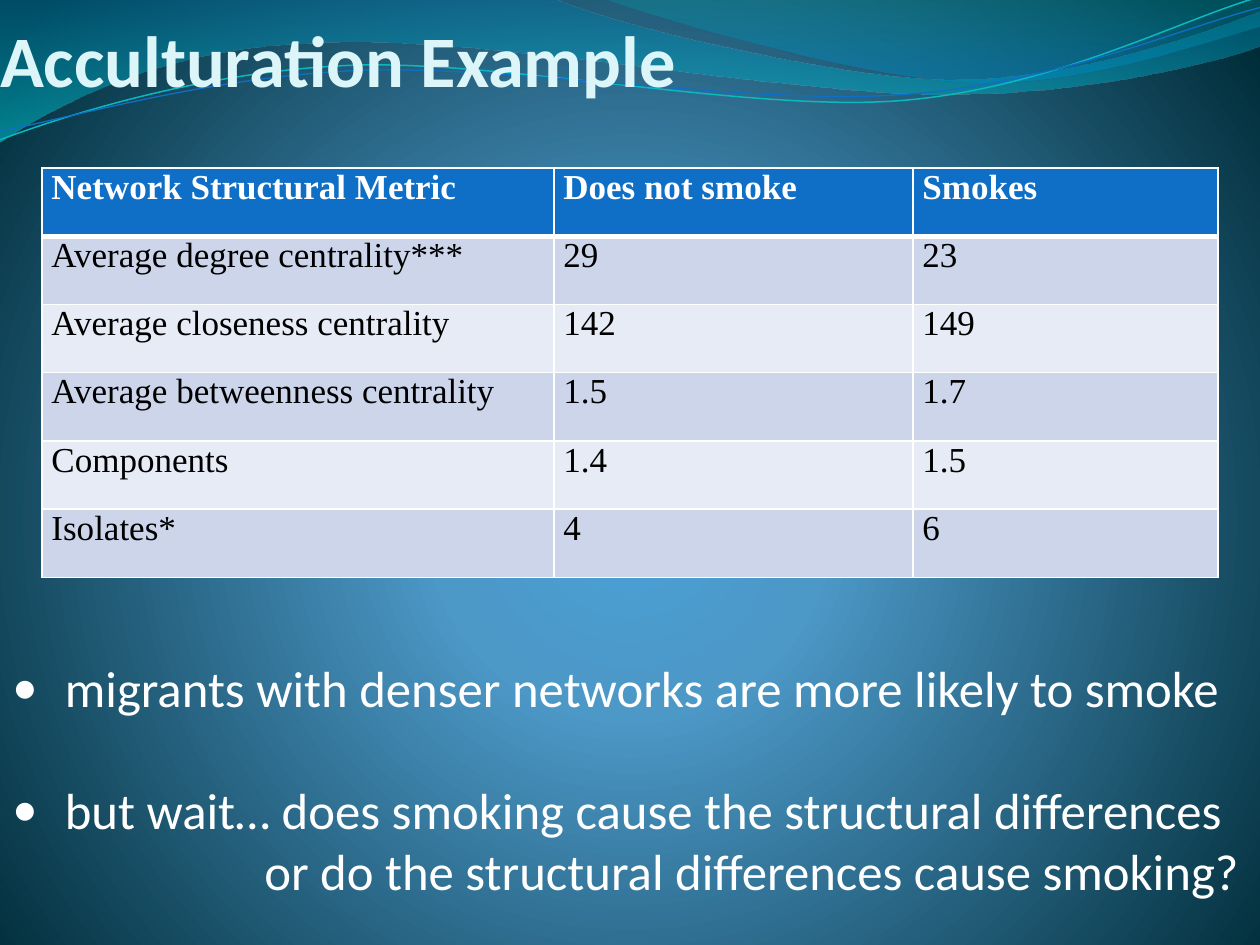
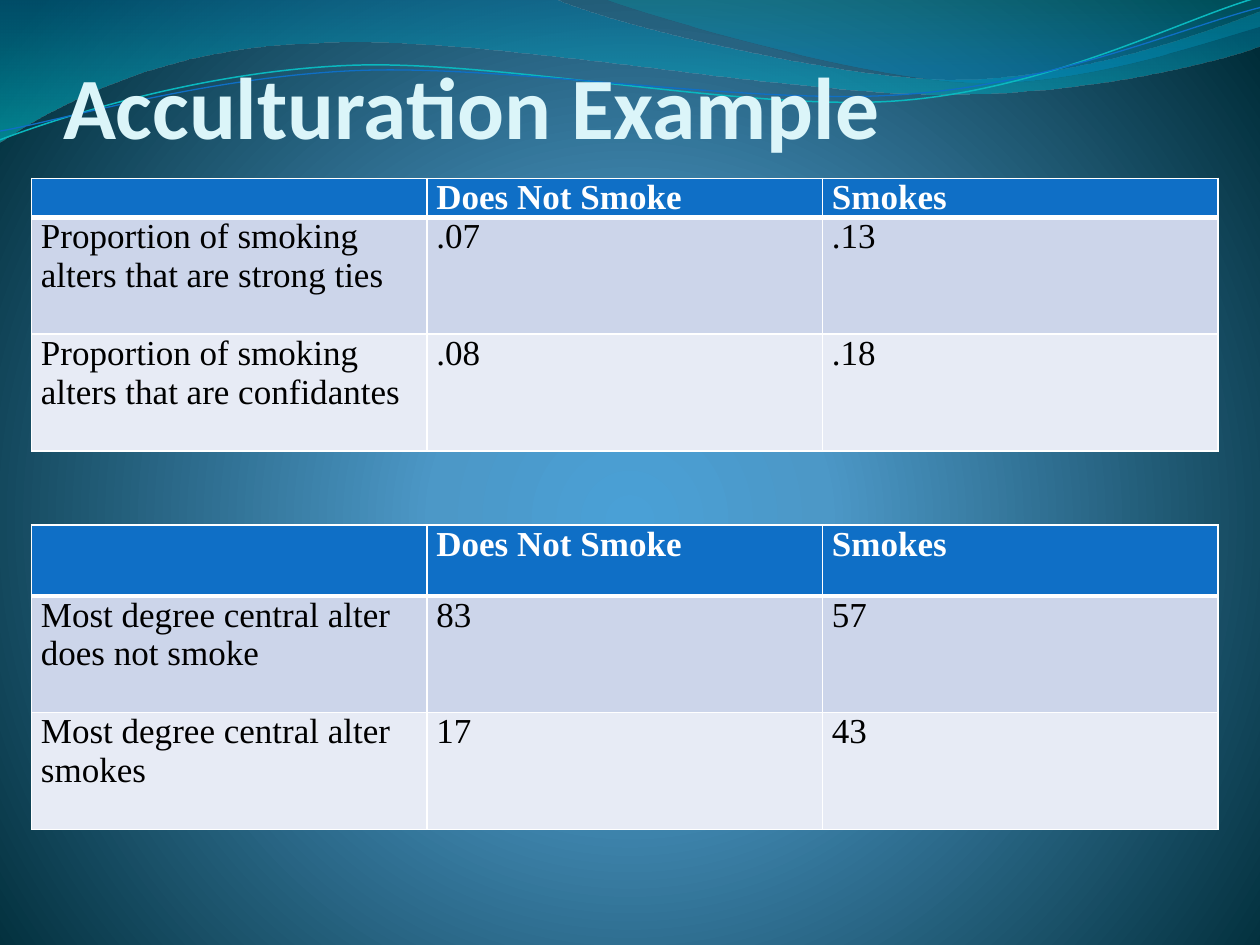
from dataclasses import dataclass

from lxml.etree import SubElement
from pptx import Presentation
from pptx.dml.color import RGBColor
from pptx.enum.text import MSO_ANCHOR as Anchor, MSO_AUTO_SIZE as AutoSize, PP_ALIGN as Align
from pptx.oxml.ns import qn
from pptx.util import Pt


@dataclass(frozen=True)
class Theme:
    heading_font: str = "Calibri"
    table_font: str = "Times New Roman"
    title: str = "DBF5F9"
    white: str = "FFFFFF"
    black: str = "000000"
    header: str = "0F6FC6"
    bands: tuple = ("CCD5EA", "E7EBF5")
    table_size: float = 20
    bullet_size: float = 29
    thin_border: float = 1
    thick_border: float = 3


@dataclass(frozen=True)
class Stop:
    position: int
    color: str
    opacity: int = 100


@dataclass(frozen=True)
class Wave:
    """Outline in points: a pair is a line end, six numbers are a curve."""
    start: tuple
    steps: tuple
    stops: tuple = ()
    line_color: str = ""
    line_width: float = 0


@dataclass(frozen=True)
class Title:
    text: str
    left: float
    top: float
    width: float
    size: float
    bottom_inset: float = 0
    height: float = 90


@dataclass(frozen=True)
class Grid:
    left: float
    top: float
    columns: tuple
    heights: tuple
    rows: tuple


@dataclass(frozen=True)
class Line:
    text: str
    margin: float
    bullet: bool = True
    space_before: float = 0


THEME = Theme()

BACKGROUND = (Stop(0, "4AA0D6"), Stop(25, "4C98C7"), Stop(100, "002C38"))
WAVES = (
    Wave((0, 0), ((316.8, -0.7), (342.7, 12.2, 478.1, 45.4, 545.8, 45.4),
                  (614.2, 45.4, 689.8, 18.7, 720, 6.5), (720.7, 25.9),
                  (707.8, 31.7, 626.4, 54.7, 537.1, 54),
                  (447.8, 54, 275, 20.2, 185, 24.5),
                  (92.9, 25.9, 33.1, 59.8, -0.7, 81.4)),
         stops=(Stop(0, "0074A1", 45), Stop(100, "00C6CF", 55))),
    Wave((344.9, -0.7), ((366.5, 7.9, 491, 44.6, 553.7, 46.8),
                         (616.3, 49.7, 691.9, 23, 720, 15.1), (720, 0)),
         stops=(Stop(0, "00A1A9", 30), Stop(80, "008BBF", 45))),
    Wave((0, 79.9), ((34.6, 67, 113.8, 41, 199.4, 37.4),
                     (284.4, 33.8, 427, 64.1, 513.4, 57.6),
                     (599.8, 51.1, 675.4, 10.8, 718.6, -1.4)),
         line_color="0AB8BF", line_width=0.85),
    Wave((0, 74.9), ((33.8, 69.1, 118.1, 43.9, 203.8, 40.3),
                     (290.2, 36.7, 429.8, 60.5, 516.2, 54),
                     (601.9, 48.2, 677.5, 15.1, 720, 4.3)),
         line_color="0F6FC6", line_width=0.75),
)

METRICS = Grid(24, 96, (292.5, 205.2, 174.3), (39,) * 6, (
    ("Network Structural Metric", "Does not smoke", "Smokes"),
    ("Average degree centrality***", "29", "23"),
    ("Average closeness centrality", "142", "149"),
    ("Average betweenness centrality", "1.5", "1.7"),
    ("Components", "1.4", "1.5"),
    ("Isolates*", "4", "6"),
))
SMOKING_HEADER = ("", "Does Not Smoke", "Smokes")
SMOKING_TIES = Grid(18, 102, (226,) * 3, (22, 66.75, 66.75), (
    SMOKING_HEADER,
    ("Proportion of smoking alters that are strong ties", ".07", ".13"),
    ("Proportion of smoking alters that are confidantes", ".08", ".18"),
))
CENTRAL_ALTERS = Grid(18, 300, (226,) * 3, (40.5, 66.75, 66.75), (
    SMOKING_HEADER,
    ("Most degree central alter does not smoke", "83", "57"),
    ("Most degree central alter smokes", "17", "43"),
))
FINDINGS = (
    Line("migrants with denser networks are more likely to smoke", 30),
    Line("but wait… does smoking cause the structural differences", 30, space_before=34.5),
    Line("or do the structural differences cause smoking?", 144, bullet=False),
)


def style_font(font, name: str, size: float, color: str, bold: bool = False) -> None:
    font.name, font.size, font.bold = name, Pt(size), bold
    font.color.rgb = RGBColor.from_string(color)


def paint_gradient(owner, stops: tuple, radial: bool = False) -> None:
    """Turn the first empty fill below owner into a gradient."""
    fill = next(owner.iter(qn("a:noFill")))
    gradient = fill.makeelement(qn("a:gradFill"), {"rotWithShape": "1"})
    stop_list = SubElement(gradient, qn("a:gsLst"))
    for stop in stops:
        entry = SubElement(stop_list, qn("a:gs"), pos=str(stop.position * 1000))
        color = SubElement(entry, qn("a:srgbClr"), val=stop.color)
        if stop.opacity < 100:
            SubElement(color, qn("a:alpha"), val=str(stop.opacity * 1000))
    if radial:
        circle = SubElement(gradient, qn("a:path"), {"path": "circle"})
        SubElement(circle, qn("a:fillToRect"), l="10000", t="110000", r="10000", b="100000")
    else:
        SubElement(gradient, qn("a:lin"), ang="5400000", scaled="1")
    fill.getparent().replace(fill, gradient)


def bend(shape, wave: Wave) -> None:
    """Replace the straight segments of a wave by its cubic curves."""
    segments = list(shape.element.iter(qn("a:lnTo")))
    for segment, step in zip(segments, wave.steps):
        if len(step) == 2:
            continue
        curve = segment.makeelement(qn("a:cubicBezTo"), {})
        for x, y in zip(step[::2], step[1::2]):
            SubElement(curve, qn("a:pt"), x=str(Pt(x) - shape.left), y=str(Pt(y) - shape.top))
        segment.getparent().replace(segment, curve)


def draw_wave(page, wave: Wave):
    builder = page.shapes.build_freeform(*map(Pt, wave.start))
    builder.add_line_segments([(Pt(step[-2]), Pt(step[-1])) for step in wave.steps],
                              close=bool(wave.stops))
    shape = builder.convert_to_shape()
    bend(shape, wave)
    shape.shadow.inherit = False
    shape.fill.background()
    if wave.stops:
        paint_gradient(shape.element, wave.stops)
        shape.line.fill.background()
    else:
        shape.line.color.rgb = RGBColor.from_string(wave.line_color)
        shape.line.width = Pt(wave.line_width)
    return shape


def decorate_layout(layout, page) -> None:
    """Give the layout its background and waves, drawn by way of a page."""
    layout.background.fill.background()
    paint_gradient(layout.element, BACKGROUND, radial=True)
    for holder in list(layout.placeholders):
        if holder.placeholder_format.idx:
            holder.element.getparent().remove(holder.element)
    tree = layout.shapes.element
    waves = [draw_wave(page, wave) for wave in WAVES]
    for index, shape in enumerate(waves, start=2):
        tree.insert(index, shape.element)


def set_title(page, title: Title) -> None:
    box = page.shapes.title
    box.left, box.top = Pt(title.left), Pt(title.top)
    box.width, box.height = Pt(title.width), Pt(title.height)
    frame = box.text_frame
    frame.text = title.text
    frame.auto_size, frame.vertical_anchor = AutoSize.NONE, Anchor.BOTTOM
    frame.margin_left = frame.margin_right = 0
    frame.margin_top, frame.margin_bottom = Pt(3.6), Pt(title.bottom_inset)
    para = frame.paragraphs[0]
    para.alignment = Align.LEFT
    style_font(para.font, THEME.heading_font, title.size, THEME.title, bold=True)


def add_borders(cell, top: float, bottom: float) -> None:
    properties = cell._tc.get_or_add_tcPr()
    thin = THEME.thin_border
    sides = (("a:lnL", thin), ("a:lnR", thin), ("a:lnT", top), ("a:lnB", bottom))
    for index, (tag, width) in enumerate(sides):
        line = properties.makeelement(qn(tag), {"w": str(Pt(width))})
        fill = SubElement(line, qn("a:solidFill"))
        SubElement(fill, qn("a:srgbClr"), val=THEME.white)
        properties.insert(index, line)


def add_grid(page, grid: Grid) -> None:
    table = page.shapes.add_table(
        len(grid.rows), len(grid.columns), Pt(grid.left), Pt(grid.top),
        Pt(sum(grid.columns)), Pt(sum(grid.heights))).table
    for column, width in zip(table.columns, grid.columns):
        column.width = Pt(width)
    for row, height in zip(table.rows, grid.heights):
        row.height = Pt(height)
    for r, texts in enumerate(grid.rows):
        is_header = r == 0
        fill = THEME.header if is_header else THEME.bands[(r - 1) % 2]
        for c, text in enumerate(texts):
            cell = table.cell(r, c)
            cell.text = text
            cell.margin_left = cell.margin_right = Pt(5.4)
            cell.margin_top = cell.margin_bottom = 0
            cell.fill.solid()
            cell.fill.fore_color.rgb = RGBColor.from_string(fill)
            style_font(cell.text_frame.paragraphs[0].font, THEME.table_font, THEME.table_size,
                       THEME.white if is_header else THEME.black, bold=is_header)
            add_borders(cell, top=THEME.thick_border if r == 1 else THEME.thin_border,
                        bottom=THEME.thick_border if is_header else THEME.thin_border)


def add_findings(page, lines: tuple) -> None:
    frame = page.shapes.add_textbox(Pt(0), Pt(372), Pt(720), Pt(147.6)).text_frame
    frame.word_wrap = True
    for index, line in enumerate(lines):
        para = frame.add_paragraph() if index else frame.paragraphs[0]
        para.text = line.text
        para.space_before = Pt(line.space_before)
        style_font(para.font, THEME.heading_font, THEME.bullet_size, THEME.white)
        properties = para._p.get_or_add_pPr()
        properties.set("marL", str(Pt(line.margin)))
        if line.bullet:
            properties.set("indent", str(-Pt(line.margin)))
            defaults = properties.find(qn("a:defRPr"))
            for tag, attributes in (("a:buFont", {"typeface": THEME.heading_font}),
                                    ("a:buChar", {"char": "•"})):
                defaults.addprevious(properties.makeelement(qn(tag), attributes))


def main() -> None:
    deck = Presentation()
    deck.slide_width, deck.slide_height = Pt(720), Pt(540)
    layout = deck.slide_layouts.get_by_name("Title Only")

    # Network metrics and findings
    page = deck.slides.add_slide(layout)
    decorate_layout(layout, page)
    set_title(page, Title("Acculturation Example", 0, 21.6, 720, 41.4, bottom_inset=53.5))
    add_grid(page, METRICS)
    add_findings(page, FINDINGS)

    # Smoking among alters
    page = deck.slides.add_slide(layout)
    set_title(page, Title("Acculturation Example", 36, 0, 648, 50))
    add_grid(page, CENTRAL_ALTERS)
    add_grid(page, SMOKING_TIES)

    deck.save("out.pptx")


if __name__ == "__main__":
    main()
